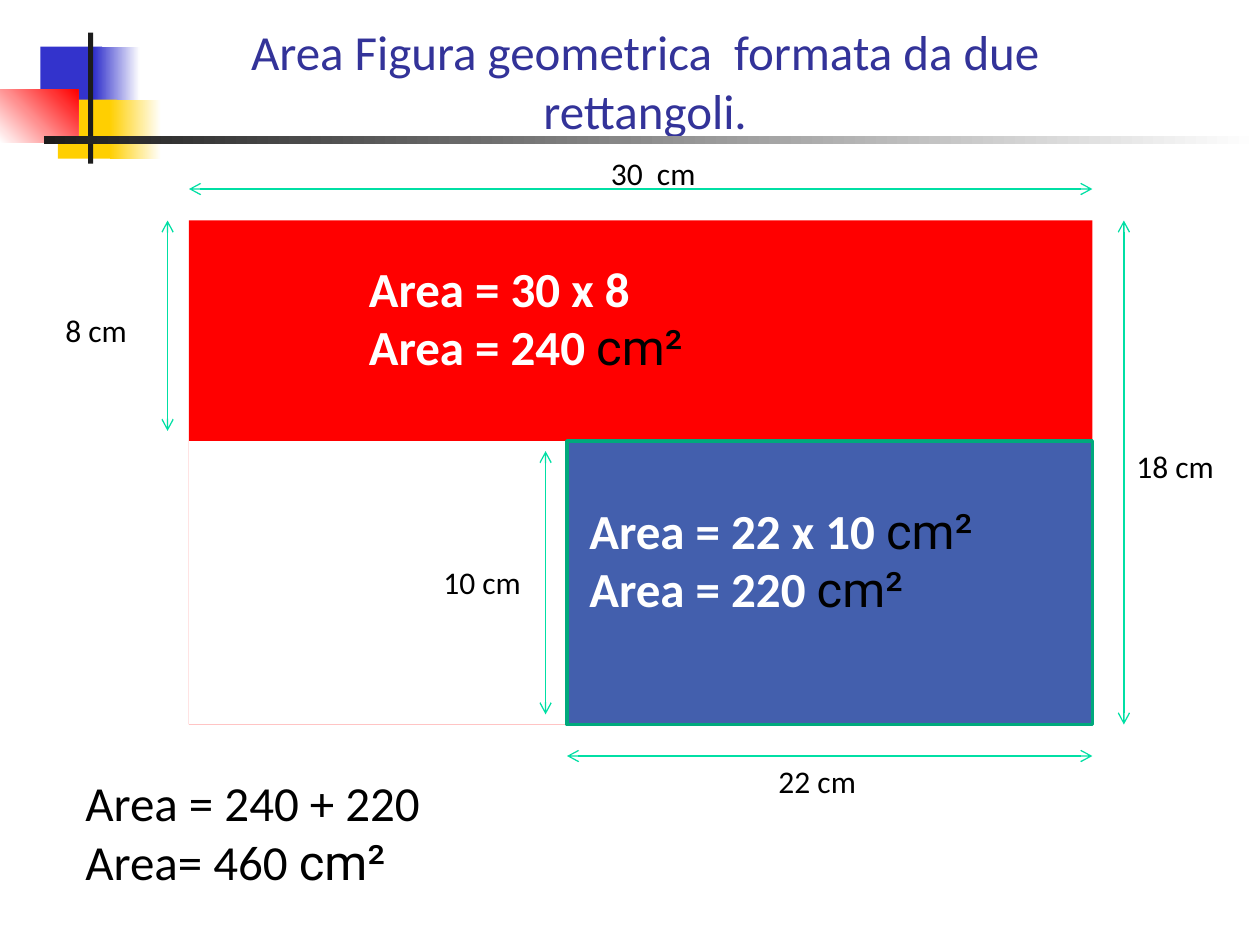
from pptx import Presentation
from pptx.dml.color import RGBColor
from pptx.enum.shapes import MSO_CONNECTOR, MSO_SHAPE
from pptx.enum.text import MSO_ANCHOR, MSO_AUTO_SIZE, PP_ALIGN
from pptx.oxml.ns import qn
from pptx.util import Inches, Pt
from lxml.etree import SubElement

WHITE = RGBColor(0xFF, 0xFF, 0xFF)
BLACK = RGBColor(0x00, 0x00, 0x00)
RED = RGBColor(0xFF, 0x00, 0x00)
BLUE = RGBColor(0x43, 0x5F, 0xAD)
GREEN = RGBColor(0x00, 0xA9, 0x7C)
MINT = RGBColor(0x00, 0xDF, 0xA4)
NAVY = RGBColor(0x33, 0x33, 0x99)
INDIGO = RGBColor(0x33, 0x33, 0xCC)
GOLD = RGBColor(0xFF, 0xCF, 0x01)
DARK = RGBColor(0x1C, 0x1C, 0x1C)

deck = Presentation()
deck.slide_width, deck.slide_height = Inches(10), Inches(7.5)
slide = deck.slides.add_slide(deck.slide_layouts[5])
shapes = slide.shapes


def add_rect(group, box, color, fade=None, angle=0):
    rect = group.add_shape(MSO_SHAPE.RECTANGLE, *map(Inches, box))
    rect.shadow.inherit = False
    rect.line.fill.background()
    if fade is None:
        rect.fill.solid()
        rect.fill.fore_color.rgb = color
    else:
        rect.fill.gradient()
        rect.fill.gradient_angle = angle
        for stop, tone in zip(rect.fill.gradient_stops, (color, fade)):
            stop.color.rgb = tone
    return rect


def write(frame, lines, size, color, bold=False):
    frame.word_wrap = True
    for row, (text, unit) in enumerate(lines):
        para = frame.add_paragraph() if row else frame.paragraphs[0]
        for words, name, tone, heavy in (
            (text, "Calibri", color, bold),
            (unit, "Roboto", BLACK, False),
        ):
            if words:
                run = para.add_run()
                run.text = words
                style = {"name": name, "size": Pt(size), "bold": heavy}
                for key, value in style.items():
                    setattr(run.font, key, value)
                run.font.color.rgb = tone


left, right, top, mid, base, step = 1.5, 8.67, 1.75, 3.5, 5.75, 4.5
add_rect(shapes, (left, top, right - left, base - top), RED)
add_rect(shapes, (left, mid, step - left, base - mid), WHITE)
lower = add_rect(shapes, (step, mid, right - step, base - mid), BLUE)
lower.line.color.rgb = GREEN
lower.line.width = Pt(2)

title = shapes.title
place = {"left": 1.17, "top": 0.12, "width": 7.9, "height": 1.51}
for key, value in place.items():
    setattr(title, key, Inches(value))
frame = title.text_frame
frame.auto_size = MSO_AUTO_SIZE.NONE
frame.vertical_anchor = MSO_ANCHOR.TOP
write(frame, [("Area Figura geometrica  formata da due rettangoli.", "")], 28, NAVY)
frame.paragraphs[0].alignment = PP_ALIGN.CENTER

sides = [
    ("8 cm", (0.42, 2.42), (1.33, top, 1.33, 3.42)),
    ("30  cm", (4.75, 1.17), (left, 1.5, right, 1.5)),
    ("18 cm", (8.92, 3.5), (8.92, top, 8.92, base)),
    ("22 cm", (6.08, 6), (step, 6, right, 6)),
    ("10 cm", (3.42, 4.42), (4.33, 3.58, 4.33, 5.67)),
]
for text, spot, ends in sides:
    arrow = shapes.add_connector(MSO_CONNECTOR.STRAIGHT, *map(Inches, ends))
    arrow.line.color.rgb = MINT
    arrow.line.width = Pt(0.75)
    line = arrow.line._get_or_add_ln()
    for tag in ("a:headEnd", "a:tailEnd"):
        SubElement(line, qn(tag)).set("type", "arrow")
    SubElement(arrow._element.spPr, qn("a:effectLst"))
    label = shapes.add_textbox(*map(Inches, (*spot, 1.08, 0.42)))
    write(label.text_frame, [(text, "")], 18, BLACK)

sums = [
    ((2.83, 2, 4.83, 1.04), WHITE, True,
     [("Area = 30 x 8", ""), ("Area = 240 ", "cm²")]),
    ((4.58, 3.92, 4.17, 1.04), WHITE, True,
     [("Area = 22 x 10 ", "cm²"), ("Area = 220 ", "cm²")]),
    ((0.58, 6.08, 3.83, 1.04), BLACK, False,
     [("Area = 240 + 220", ""), ("Area= 460 ", "cm²")]),
]
for box, color, bold, lines in sums:
    note = shapes.add_textbox(*map(Inches, box))
    write(note.text_frame, lines, 28, color, bold)

decor = shapes.add_group_shape().shapes
for box, *paint in [
    ((0.32, 0.37, 0.49, 0.47), INDIGO),
    ((0.75, 0.37, 0.36, 0.47), INDIGO, WHITE),
    ((0.46, 0.79, 0.47, 0.47), GOLD),
    ((0.87, 0.79, 0.41, 0.47), GOLD, WHITE),
    ((0, 0.71, 0.62, 0.42), WHITE, RED, 45),
    ((0.7, 0.26, 0.04, 1.04), DARK),
    ((0.35, 1.08, 9.65, 0.06), DARK, WHITE),
]:
    add_rect(decor, box, *paint)

deck.save("out.pptx")
